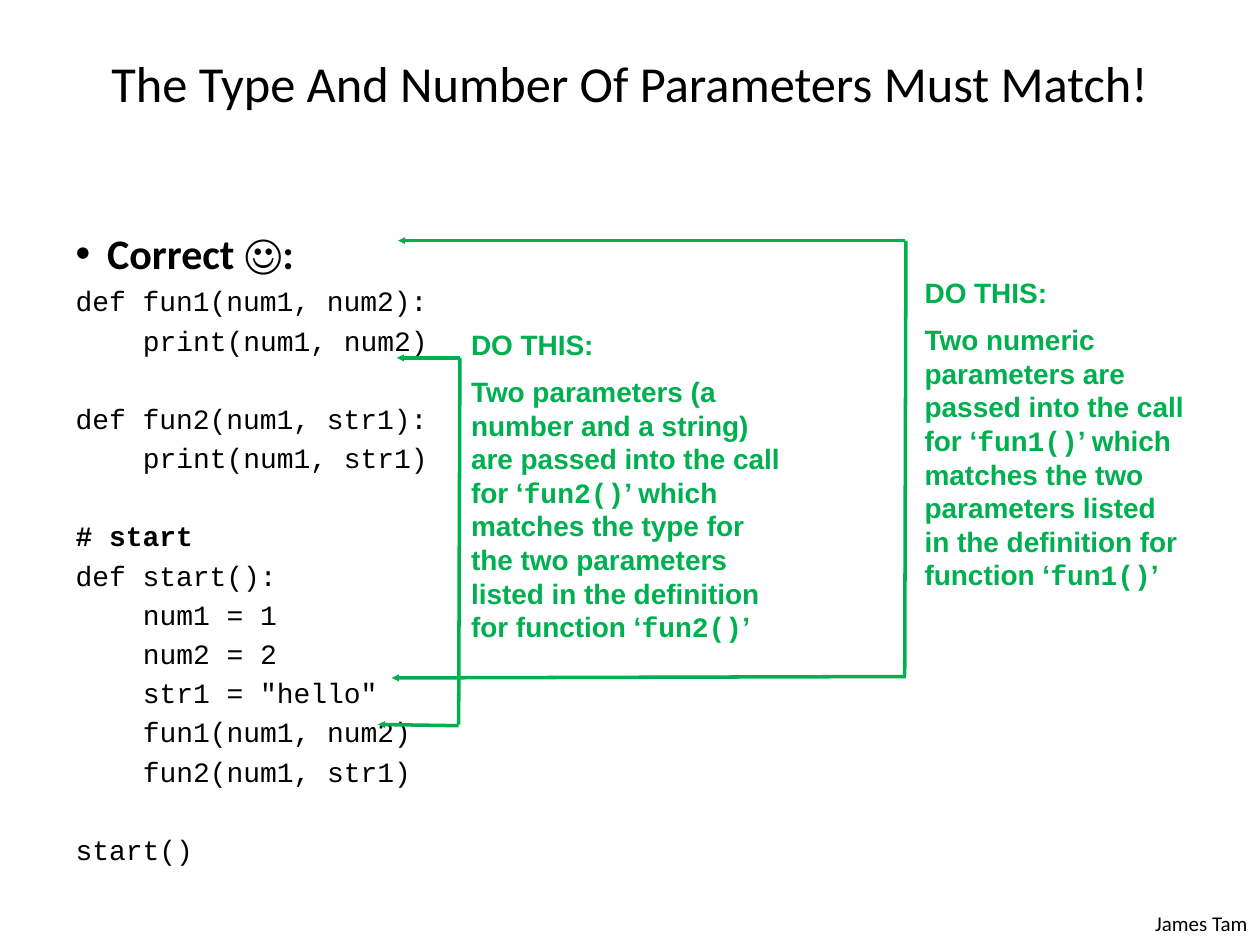
from lxml import etree
from pptx import Presentation
from pptx.dml.color import RGBColor
from pptx.enum import shapes, text
from pptx.oxml import ns
from pptx.util import Pt

# Content
BLACK, GREEN = "000000", "00B050"
SANS, NOTE, CODE = "Calibri", "Arial", "Courier New"
TITLE = "The Type And Number Of Parameters Must Match!"
HEADING = "Correct ☺:"
FOOTER = "James Tam"
# Each block of code: (indent level, line, bold)
CODE_BLOCKS = [
    [(0, "def fun1(num1, num2):", False), (1, "print(num1, num2)", False)],
    [(0, "def fun2(num1, str1):", False), (1, "print(num1, str1)", False)],
    [(0, "# start", True), (0, "def start():", False),
     (1, "num1 = 1", False), (1, "num2 = 2", False),
     (1, 'str1 = "hello"', False),
     (1, "fun1(num1, num2)", False), (1, "fun2(num1, str1)", False)],
    [(0, "start()", False)],
]
# Each note: box (left, top, width, height) and its runs
NOTES = [
    ((521.3, 152.6, 164.2, 191.5), [
        ("Two numeric parameters are passed into the call for ‘", NOTE),
        ("fun1()", CODE),
        ("’ which matches the two parameters listed in the definition "
         "for function ‘", NOTE),
        ("fun1()", CODE), ("’", NOTE)]),
    ((262.1, 182.2, 195.1, 191.5), [
        ("Two parameters (a number and a string) are passed into the call "
         "for ‘", NOTE),
        ("fun2()", CODE),
        ("’ which matches the type for the two parameters listed in the "
         "definition for function ‘", NOTE),
        ("fun2()", CODE), ("’", NOTE)]),
]
# Each line: start, end, has arrowhead
LINES = [
    ((517.7, 386.6), (223.9, 387.4), True),
    ((517, 137.5), (227.5, 137.5), True),
    ((517.7, 137.5), (517, 385.9), False),
    ((262.8, 204.5), (226.8, 204.5), True),
    ((262.8, 204.5), (262.1, 414), False),
    ((262.1, 414.7), (216, 414), True),
]
CODE_PITCH, CODE_INDENT, NOTE_PITCH = 22.4, 38.4, 19.2


def color(hex_string):
    return RGBColor.from_string(hex_string)


def add_run(paragraph, words, size, font, hex_color=BLACK, bold=False):
    run = paragraph.add_run()
    run.text = words
    run.font.size = Pt(size)
    run.font.name = font
    run.font.bold = bold
    run.font.color.rgb = color(hex_color)


def place(shape, left, top, width, height):
    shape.left, shape.top = Pt(left), Pt(top)
    shape.width, shape.height = Pt(width), Pt(height)


def set_spacing(paragraph, before, pitch):
    paragraph.space_before = Pt(before)
    paragraph.line_spacing = Pt(pitch)


def set_indent(paragraph, left, first, bullet=None):
    properties = paragraph._p.get_or_add_pPr()
    properties.set("marL", str(Pt(left)))
    properties.set("indent", str(Pt(first)))
    if bullet:
        etree.SubElement(properties, ns.qn("a:buFont")).set("typeface", "Arial")
        etree.SubElement(properties, ns.qn("a:buChar")).set("char", bullet)
    else:
        etree.SubElement(properties, ns.qn("a:buNone"))


def add_line(slide, start, end, arrow):
    connector = slide.shapes.add_connector(
        shapes.MSO_CONNECTOR.STRAIGHT, *map(Pt, start + end))
    connector.line.color.rgb = color(GREEN)
    connector.line.width = Pt(2)
    if arrow:
        head = etree.SubElement(connector.line._get_or_add_ln(),
                                ns.qn("a:tailEnd"))
        for key, value in (("type", "triangle"), ("w", "sm"), ("len", "sm")):
            head.set(key, value)
    etree.SubElement(connector._element.spPr, ns.qn("a:effectLst"))


def add_note(slide, box, runs):
    shape = slide.shapes.add_textbox(*map(Pt, box))
    frame = shape.text_frame
    frame.word_wrap = True
    frame.margin_top = Pt(5)
    heading, body = frame.paragraphs[0], frame.add_paragraph()
    set_spacing(heading, 0, NOTE_PITCH)
    set_spacing(body, 7.7, NOTE_PITCH)
    add_run(heading, "DO THIS:", 16, NOTE, GREEN, True)
    for words, font in runs:
        add_run(body, words, 16, font, GREEN, True)


def main():
    presentation = Presentation()
    presentation.slide_width, presentation.slide_height = Pt(720), Pt(540)
    slide = presentation.slides.add_slide(presentation.slide_layouts[1])
    title, body = slide.placeholders

    # Footer
    footer = slide.shapes.add_textbox(Pt(624.2), Pt(517), Pt(95.8), Pt(21.6))
    footer.text_frame.word_wrap = True
    paragraph = footer.text_frame.paragraphs[0]
    paragraph.alignment = text.PP_ALIGN.RIGHT
    add_run(paragraph, FOOTER, 12, SANS)

    # Title
    place(title, 36, 21.6, 648, 50.4)
    title.text_frame.auto_size = text.MSO_AUTO_SIZE.NONE
    title.text_frame.vertical_anchor = text.MSO_ANCHOR.MIDDLE
    paragraph = title.text_frame.paragraphs[0]
    paragraph.alignment = text.PP_ALIGN.CENTER
    add_run(paragraph, TITLE, 28.8, SANS)

    # Heading and code
    place(body, 36, 90, 648, 426.2)
    frame = body.text_frame
    frame.auto_size = text.MSO_AUTO_SIZE.NONE
    frame.vertical_anchor = text.MSO_ANCHOR.TOP
    frame.margin_top = Pt(39)
    paragraph = frame.paragraphs[0]
    set_spacing(paragraph, 0, 30)
    set_indent(paragraph, 18, -18, "•")
    add_run(paragraph, HEADING, 24, SANS, bold=True)
    for block_index, block in enumerate(CODE_BLOCKS):
        for line_index, (level, words, bold) in enumerate(block):
            paragraph = frame.add_paragraph()
            new_block = block_index > 0 and line_index == 0
            set_spacing(paragraph, CODE_PITCH if new_block else 0, CODE_PITCH)
            set_indent(paragraph, level * CODE_INDENT, 0)
            add_run(paragraph, words, 16, CODE, bold=bold)

    # Arrows and notes
    for start, end, arrow in LINES:
        add_line(slide, start, end, arrow)
    for box, runs in NOTES:
        add_note(slide, box, runs)

    presentation.save("out.pptx")


if __name__ == "__main__":
    main()
